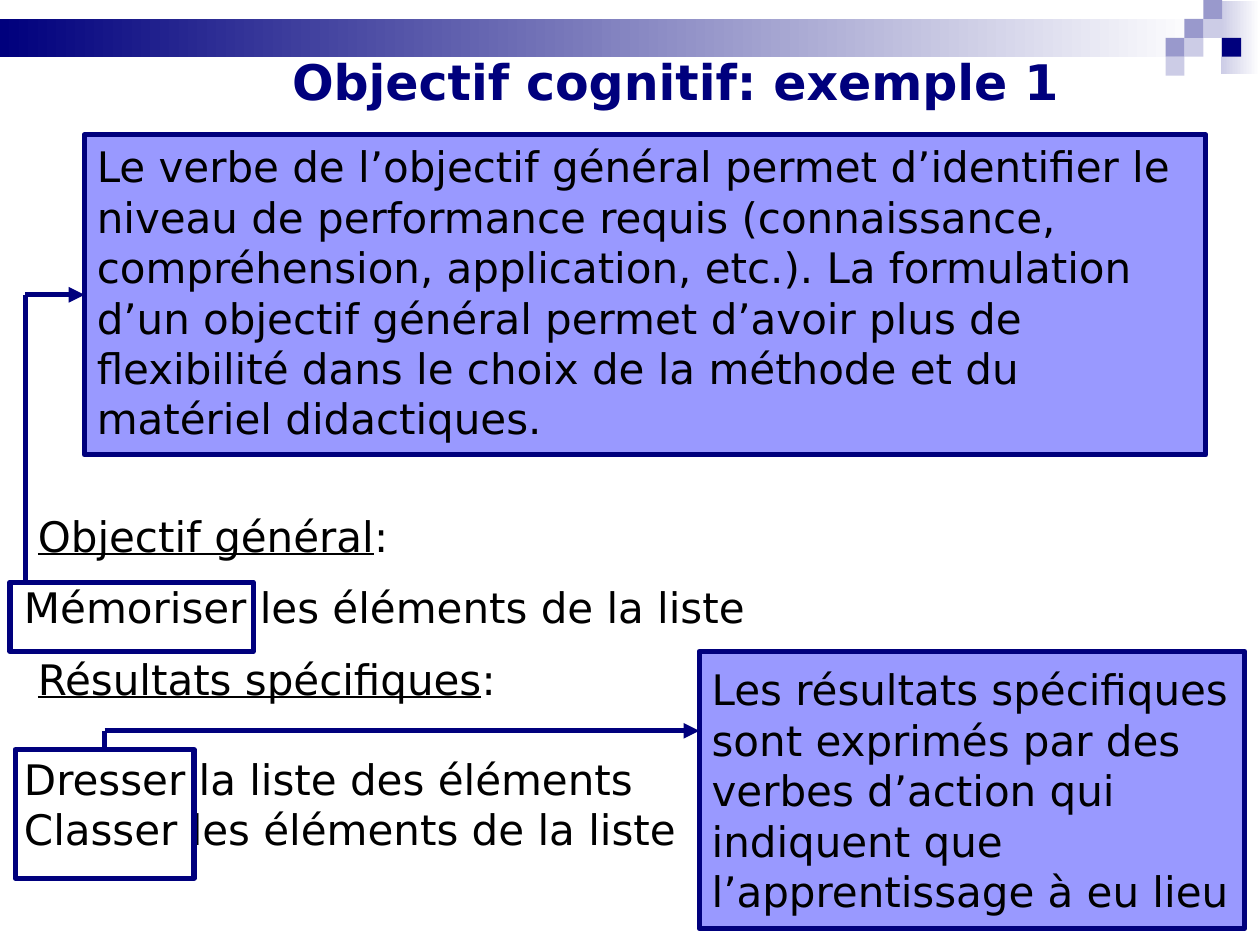
from dataclasses import dataclass

from lxml import etree
from pptx import Presentation
from pptx import util as u
from pptx.dml.color import RGBColor
from pptx.enum import shapes, text
from pptx.oxml.ns import qn


@dataclass(frozen=True)
class Theme:
    navy: str = "00007D"
    mauve: str = "9999CC"
    pale: str = "CCCCE6"
    panel: str = "9999FF"
    white: str = "FFFFFF"
    black: str = "000000"
    font: str = "DejaVu Sans"
    title: int = 28
    body: int = 24
    line: int = 3


T = Theme()
TITLE = ("Objectif cognitif: exemple 1", (1.61, 0.36, 7.5, 0.57))

# (underlined part, plain part, space before in points)
BODY = [
    ("Objectif général", ":", 0),
    ("", "Mémoriser les éléments de la liste", 12),
    ("Résultats spécifiques", ":", 12),
    ("", "Dresser la liste des éléments", 28.5),
    ("", "Classer les éléments de la liste", 0),
]
BODY_AT = (0.09, 4, 9.08, 2.9)
HEADING_INDENT = 0.11

GENERAL_NOTE = [
    "Le verbe de l’objectif général permet d’identifier le niveau de performance "
    "requis (connaissance, compréhension, application, etc.). La formulation d’un "
    "objectif général permet d’avoir plus de flexibilité dans le choix de la méthode "
    "et du matériel didactiques."
]
RESULTS_NOTE = [
    "Les résultats spécifiques",
    "sont exprimés par des",
    "verbes d’action qui",
    "indiquent que",
    "l’apprentissage à eu lieu",
]

# Corner mosaic: (column, row, colour) on a square grid
CELL, MOSAIC_LEFT = 0.15, 9.25
MOSAIC = [(1, 2, T.pale), (0, 3, T.pale), (0, 2, T.mauve), (2, 1, T.pale),
          (3, 2, T.navy), (1, 1, T.mauve), (2, 0, T.mauve)]
FADES = [((9.69, 0.01, 0.31, 0.58), T.pale), ((0, 0.15, 9.55, 0.3), T.navy)]


def rgb(value):
    return RGBColor.from_string(value)


def inches(values):
    return [u.Inches(v) for v in values]


def style(font, **extra):
    """Apply the theme's body font, changed by any extra values."""
    values = {"name": T.font, "size": u.Pt(T.body), "bold": False, **extra}
    font.color.rgb = rgb(values.pop("color", T.black))
    for name, value in values.items():
        setattr(font, name, value)


def place(shape, at):
    for name, value in zip(("left", "top", "width", "height"), inches(at)):
        setattr(shape, name, value)


def add_box(s, at, fill=None, border=None):
    box = s.shapes.add_shape(shapes.MSO_SHAPE.RECTANGLE, *inches(at))
    box.shadow.inherit = False
    if fill:
        box.fill.solid()
        box.fill.fore_color.rgb = rgb(fill)
    else:
        box.fill.background()
    if border:
        box.line.color.rgb = rgb(border)
        box.line.width = u.Pt(T.line)
    else:
        box.line.fill.background()
    return box


def add_fade(s, at, color):
    fill = add_box(s, at).fill
    fill.gradient()
    fill.gradient_angle = 0
    for stop, value in zip(fill.gradient_stops, (color, T.white)):
        stop.color.rgb = rgb(value)


def add_note(s, at, lines, anchor, wrap):
    box = add_box(s, at, T.panel, T.navy)
    tf = box.text_frame
    tf.word_wrap, tf.vertical_anchor = wrap, anchor
    for i, line in enumerate(lines):
        p = tf.paragraphs[0] if i == 0 else tf.add_paragraph()
        p.alignment = text.PP_ALIGN.LEFT
        r = p.add_run()
        r.text = line
        style(r.font)
    return box


def add_line(s, start, end, arrow=False):
    line = s.shapes.add_connector(shapes.MSO_CONNECTOR.STRAIGHT, *inches(start + end))
    line.line.color.rgb = rgb(T.navy)
    line.line.width = u.Pt(T.line)
    if arrow:
        etree.SubElement(line.line._get_or_add_ln(), qn("a:tailEnd"), type="triangle")
    etree.SubElement(line._element.spPr, qn("a:effectLst"))
    return line


def fill_title(shape):
    words, at = TITLE
    place(shape, at)
    tf = shape.text_frame
    tf.auto_size = text.MSO_AUTO_SIZE.NONE
    p = tf.paragraphs[0]
    p.alignment = text.PP_ALIGN.CENTER
    r = p.add_run()
    r.text = words
    style(r.font, size=u.Pt(T.title), bold=True, color=T.navy)


def fill_body(shape):
    place(shape, BODY_AT)
    tf = shape.text_frame
    tf.auto_size = text.MSO_AUTO_SIZE.NONE
    for i, (heading, rest, gap) in enumerate(BODY):
        p = tf.paragraphs[0] if i == 0 else tf.add_paragraph()
        pPr = p._p.get_or_add_pPr()
        pPr.set("marL", str(u.Inches(HEADING_INDENT if heading else 0)))
        pPr.set("indent", "0")
        etree.SubElement(pPr, qn("a:buNone"))
        p.space_before = u.Pt(gap)
        for words, underline in ((heading, True), (rest, False)):
            if words:
                r = p.add_run()
                r.text = words
                style(r.font, underline=underline)


def main():
    prs = Presentation()
    prs.slide_width, prs.slide_height = inches((10, 7.5))
    s = prs.slides.add_slide(prs.slide_layouts[1])
    fill_title(s.shapes.title)
    fill_body(s.placeholders[1])

    for at, color in FADES:
        add_fade(s, at, color)
    for col, row, color in MOSAIC:
        add_box(s, (MOSAIC_LEFT + col * CELL, row * CELL, CELL, CELL), color)

    general = add_note(s, (0.67, 1.07, 8.9, 2.54), GENERAL_NOTE, text.MSO_ANCHOR.TOP, True)
    add_note(s, (5.55, 5.17, 4.33, 2.2), RESULTS_NOTE, text.MSO_ANCHOR.MIDDLE, False)
    action_verbs = add_box(s, (0.12, 5.95, 1.42, 1.02), border=T.navy)
    add_box(s, (0.08, 4.62, 1.93, 0.55), border=T.navy)

    verbs_corner, general_corner = (0.83, 5.8), (0.2, 2.34)
    add_line(s, verbs_corner, (0.83, 5.95)).end_connect(action_verbs, 0)
    add_line(s, verbs_corner, (5.55, 5.8), arrow=True)
    add_line(s, (0.2, 4.62), general_corner)
    add_line(s, general_corner, (0.67, 2.34), arrow=True).end_connect(general, 1)
    prs.save("out.pptx")


if __name__ == "__main__":
    main()
